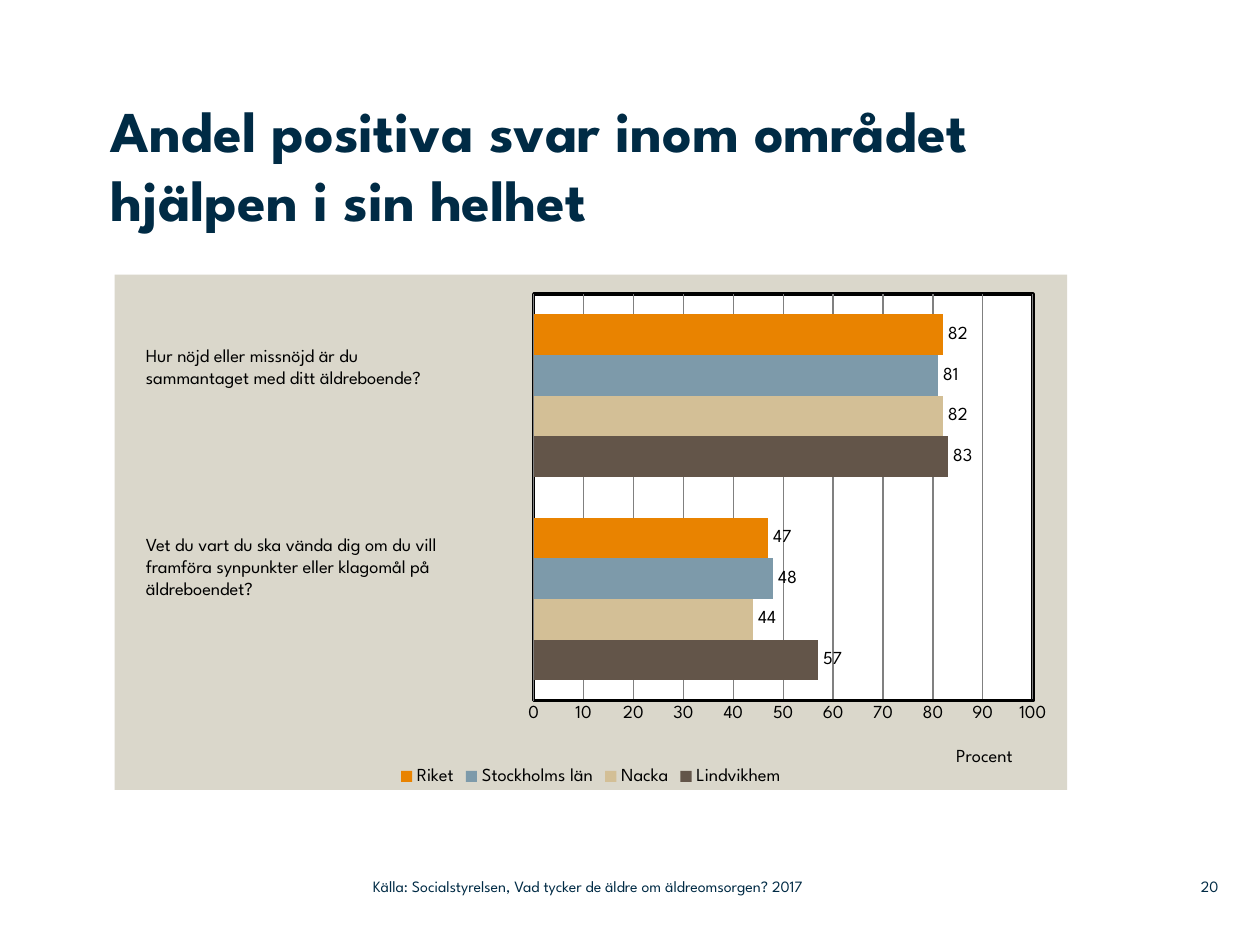
import lxml.etree
import pptx
import pptx.chart.data
import pptx.dml.color
import pptx.enum.chart
import pptx.enum.text
import pptx.oxml
import pptx.oxml.ns
import pptx.util
from pptx.util import Inches

FONT = "League Spartan"
COLORS = {
    "navy": "002B45", "black": "000000", "white": "FFFFFF", "panel": "DAD7CB", "grid": "808080",
    "home": "635549", "nacka": "D3BF96", "county": "7D9AAA", "nation": "E98300",
}
RESULTS = [
    ("Lindvikhem", (57, 83), "home"),
    ("Nacka", (44, 82), "nacka"),
    ("Stockholms län", (48, 81), "county"),
    ("Riket", (47, 82), "nation"),
]
QUESTIONS = [
    ((1.06, 2.68, 2.98, 0.45), ["Hur nöjd eller missnöjd är du", "sammantaget med ditt äldreboende?"]),
    ((1.06, 4.18, 2.97, 0.63),
     ["Vet du vart du ska vända dig om du vill framföra synpunkter eller klagomål på äldreboendet?"]),
]


def rgb(name):
    """Return the palette colour called name."""
    return pptx.dml.color.RGBColor.from_string(COLORS[name])


def style_font(font, size, color="black", bold=False):
    """Set the typeface, size, colour and weight of a font."""
    font.name, font.size, font.bold = FONT, pptx.util.Pt(size), bold
    font.color.rgb = rgb(color)


def add_text(slide, box, lines, size, color="black", bold=False, inset=0.0, align="LEFT", anchor="TOP"):
    """Place lines of text, one paragraph each, in a box."""
    frame = slide.shapes.add_textbox(*map(Inches, box)).text_frame
    frame.word_wrap = True
    frame.margin_left = frame.margin_right = Inches(inset)
    frame.margin_top = frame.margin_bottom = Inches(inset / 2)
    frame.vertical_anchor = getattr(pptx.enum.text.MSO_ANCHOR, anchor)
    for index, line in enumerate(lines):
        paragraph = frame.add_paragraph() if index else frame.paragraphs[0]
        paragraph.alignment = getattr(pptx.enum.text.PP_ALIGN, align)
        run = paragraph.add_run()
        run.text = line
        style_font(run.font, size, color, bold)


def chart_xml(body):
    """Parse a chart element from its markup."""
    spaces = pptx.oxml.ns.nsdecls("c", "a")
    tag, rest = body.split(">", 1)
    return pptx.oxml.parse_xml(f"{tag} {spaces}>{rest}")


def area_format(fill, line=""):
    """Return the shape properties of a filled chart area."""
    outline = f'<a:solidFill><a:srgbClr val="{COLORS[line]}"/></a:solidFill>' if line else "<a:noFill/>"
    return chart_xml(
        f'<c:spPr><a:solidFill><a:srgbClr val="{COLORS[fill]}"/></a:solidFill>'
        f'<a:ln w="{pptx.util.Pt(2)}">{outline}</a:ln></c:spPr>')


def manual_layout(x, y, size=None):
    """Return a manual layout given in fractions of the chart."""
    target = '<c:layoutTarget val="inner"/>' if size else ""
    extent = f'<c:w val="{size[0]}"/><c:h val="{size[1]}"/>' if size else ""
    return chart_xml(
        f'<c:layout><c:manualLayout>{target}<c:xMode val="edge"/><c:yMode val="edge"/>'
        f'<c:x val="{x}"/><c:y val="{y}"/>{extent}</c:manualLayout></c:layout>')


def replace_layout(parent, layout, position):
    """Put a layout at a position in its parent, in place of any earlier one."""
    for earlier in parent.findall(pptx.oxml.ns.qn("c:layout")):
        parent.remove(earlier)
    parent.insert(position, layout)


def style_value_axis(axis):
    """Format the percent axis, its gridlines and its title."""
    axis.minimum_scale, axis.maximum_scale, axis.major_unit = 0, 100, 10
    axis.major_tick_mark = axis.minor_tick_mark = pptx.enum.chart.XL_TICK_MARK.NONE
    axis.format.line.color.rgb = rgb("black")
    axis.format.line.width = pptx.util.Pt(2)
    axis.has_major_gridlines = True
    axis.major_gridlines.format.line.color.rgb = rgb("grid")
    axis.major_gridlines.format.line.width = pptx.util.Pt(0.75)
    style_font(axis.tick_labels.font, 10.5)
    run = axis.axis_title.text_frame.paragraphs[0].add_run()
    run.text = "Procent"
    style_font(run.font, 10.5)
    replace_layout(axis.axis_title._element, manual_layout(0.88, 0.91), 1)


def add_result_chart(slide, box):
    """Place the bar chart of positive answers in a box."""
    data = pptx.chart.data.CategoryChartData(number_format="0")
    data.categories = ["1", "2"]
    for name, values, _ in RESULTS:
        data.add_series(name, values)
    kind = pptx.enum.chart.XL_CHART_TYPE.BAR_CLUSTERED
    chart = slide.shapes.add_chart(kind, *map(Inches, box), data).chart
    style_font(chart.font, 10.5)
    chart.has_title = False
    chart.has_legend = True
    chart.legend.position = pptx.enum.chart.XL_LEGEND_POSITION.BOTTOM
    chart.legend.include_in_layout = False
    style_font(chart.legend.font, 10.5)
    chart.category_axis.visible = False
    style_value_axis(chart.value_axis)

    plot = chart.plots[0]
    plot.gap_width, plot.overlap, plot.vary_by_categories = 100, 0, False
    for series, (_, _, color) in zip(plot.series, RESULTS):
        series.format.fill.solid()
        series.format.fill.fore_color.rgb = rgb(color)
        labels = series.data_labels
        labels.show_value = True
        labels.position = pptx.enum.chart.XL_LABEL_POSITION.OUTSIDE_END
        style_font(labels.font, 10.5)

    chart_element = chart._chartSpace.chart
    plot_area = chart_element.plotArea
    replace_layout(plot_area, manual_layout(0.44, 0.038, (0.524, 0.789)), 0)
    plot_area.append(area_format("white", "black"))
    chart_element.addnext(area_format("panel"))


def add_footer(slide, source_box, number_box):
    """Place the source line and the page number."""
    source = "Källa: Socialstyrelsen, Vad tycker de äldre om äldreomsorgen? 2017"
    add_text(slide, source_box, [source], 9, "navy", anchor="MIDDLE")
    add_text(slide, number_box, ["20"], 9, "navy", align="RIGHT", anchor="MIDDLE")


def main():
    """Build the slide and save it."""
    deck = pptx.Presentation()
    deck.slide_width, deck.slide_height = Inches(10), Inches(7.5)
    slide = deck.slides.add_slide(deck.slide_layouts[6])
    add_result_chart(slide, (0.91, 2.18, 7.56, 4.09))
    title = "Andel positiva svar inom området hjälpen i sin helhet"
    add_text(slide, (0.88, 0.75, 7.6, 1.42), [title], 33, "navy", bold=True)
    for box, lines in QUESTIONS:
        add_text(slide, box, lines, 10.5, inset=0.1)
    add_footer(slide, (2.96, 6.89, 4.43, 0.29), (9.2, 6.89, 0.47, 0.29))
    deck.save("out.pptx")


if __name__ == "__main__":
    main()
